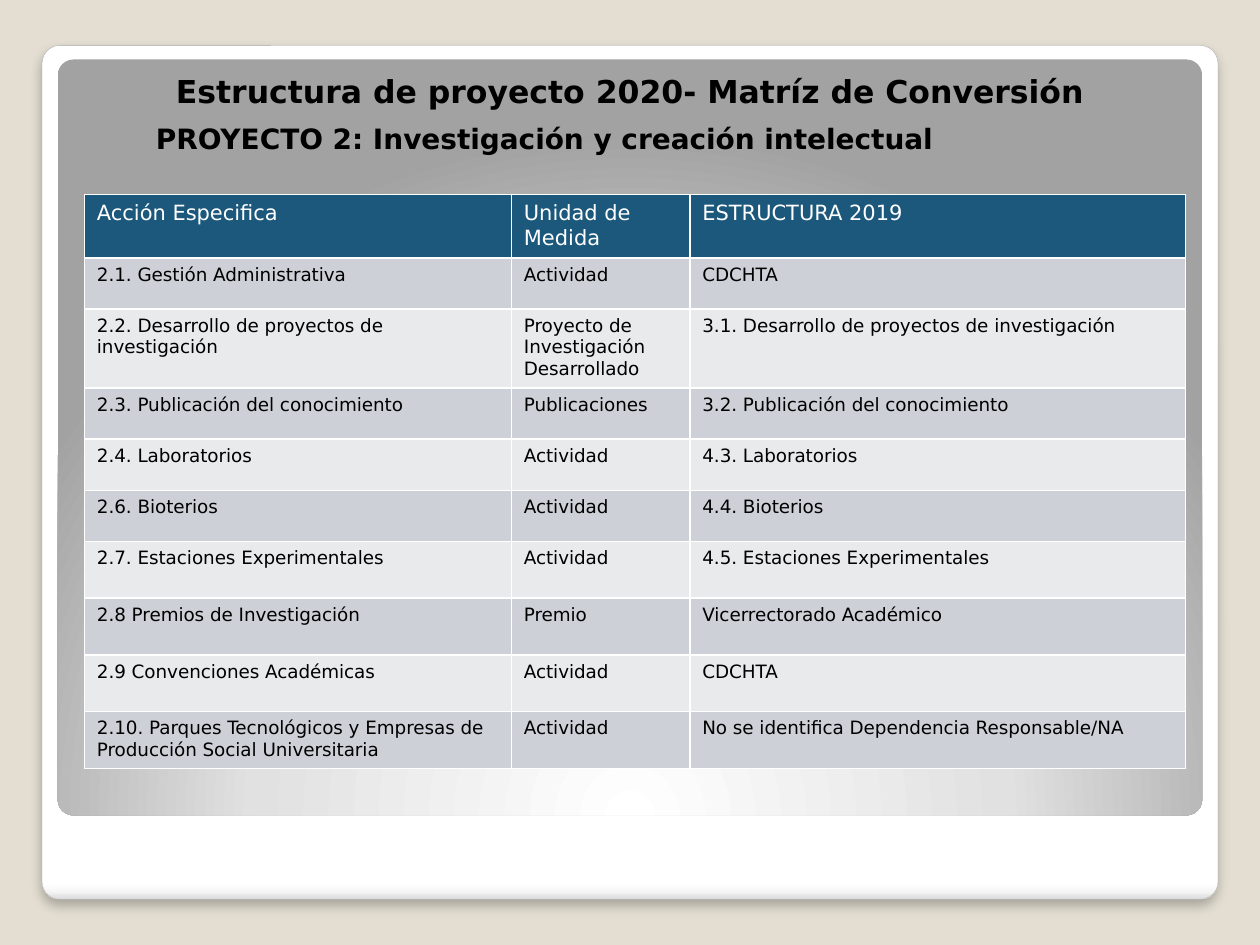
from lxml.etree import SubElement
from pptx import Presentation
from pptx.dml.color import RGBColor
from pptx.enum.shapes import MSO_SHAPE
from pptx.oxml import parse_xml
from pptx.oxml.ns import nsdecls, qn
from pptx.util import Pt

FONT = "DejaVu Sans"
WHITE, BLACK = "FFFFFF", "000000"
HEADER_FILL = "1B587C"
BAND_FILLS = ["CDD1D7", "E8EAEC"]

COLUMN_WIDTHS = [244, 102, 283.4]
ROW_HEIGHTS = [36, 29.3, 45] + [29.3] * 3 + [32.4] * 4
ROWS = [
    ("Acción Especifica", "Unidad de Medida", "ESTRUCTURA 2019"),
    ("2.1. Gestión Administrativa", "Actividad", "CDCHTA"),
    ("2.2. Desarrollo de proyectos de investigación",
     "Proyecto de Investigación Desarrollado",
     "3.1. Desarrollo de proyectos de investigación"),
    ("2.3. Publicación del conocimiento", "Publicaciones",
     "3.2. Publicación del conocimiento"),
    ("2.4. Laboratorios", "Actividad", "4.3. Laboratorios"),
    ("2.6. Bioterios", "Actividad", "4.4. Bioterios"),
    ("2.7. Estaciones Experimentales", "Actividad",
     "4.5. Estaciones Experimentales"),
    ("2.8 Premios de Investigación", "Premio", "Vicerrectorado Académico"),
    ("2.9 Convenciones Académicas", "Actividad", "CDCHTA"),
    ("2.10. Parques Tecnológicos y Empresas de Producción Social Universitaria",
     "Actividad", "No se identifica Dependencia Responsable/NA"),
]

LINEAR_DOWN = '<a:lin ang="5400000" scaled="0"/>'
CIRCLE_FROM_BELOW = ('<a:path path="circle"><a:fillToRect l="50000" t="175000" '
                     'r="50000" b="-75000"/></a:path>')


def color(value):
    return RGBColor.from_string(value)


def format_text(text_frame, size, text_color, bold=False):
    for paragraph in text_frame.paragraphs:
        for run in paragraph.runs:
            run.font.name = FONT
            run.font.size = Pt(size)
            run.font.bold = bold
            run.font.color.rgb = color(text_color)


def add_panel(slide, left, top, width, height, stops, direction):
    """Rounded rectangle with a gradient fill and no outline."""
    shape = slide.shapes.add_shape(MSO_SHAPE.ROUNDED_RECTANGLE,
                                   Pt(left), Pt(top), Pt(width), Pt(height))
    shape.adjustments[0] = 0.021
    shape.shadow.inherit = False
    shape.line.fill.background()
    stop_xml = "".join(
        f'<a:gs pos="{position * 1000}"><a:srgbClr val="{value}"/></a:gs>'
        for position, value in stops)
    gradient = parse_xml(f'<a:gradFill {nsdecls("a")} rotWithShape="1">'
                         f'<a:gsLst>{stop_xml}</a:gsLst>{direction}</a:gradFill>')
    shape.element.spPr.find(qn("a:prstGeom")).addnext(gradient)
    return shape


def add_drop_shadow(shape, blur, distance, opacity):
    effects = shape.element.spPr.find(qn("a:effectLst"))
    shadow = SubElement(effects, qn("a:outerShdw"), blurRad=str(Pt(blur)),
                        dist=str(Pt(distance)), dir="5400000",
                        algn="t", rotWithShape="0")
    shade = SubElement(shadow, qn("a:srgbClr"), val=BLACK)
    SubElement(shade, qn("a:alpha"), val=str(opacity * 1000))


def add_heading(slide, left, top, width, height, text, size, wrap):
    box = slide.shapes.add_textbox(Pt(left), Pt(top), Pt(width), Pt(height))
    box.text_frame.word_wrap = wrap
    box.text_frame.text = text
    format_text(box.text_frame, size, BLACK, bold=True)


def set_borders(cell, value, width):
    properties = cell._tc.get_or_add_tcPr()
    for side in ("lnL", "lnR", "lnT", "lnB"):
        line = SubElement(properties, qn(f"a:{side}"), w=str(Pt(width)))
        fill = SubElement(line, qn("a:solidFill"))
        SubElement(fill, qn("a:srgbClr"), val=value)


def add_matrix(slide, left, top):
    frame = slide.shapes.add_table(len(ROWS), len(COLUMN_WIDTHS), Pt(left), Pt(top),
                                   Pt(sum(COLUMN_WIDTHS)), Pt(sum(ROW_HEIGHTS)))
    table = frame.table
    for column, width in zip(table.columns, COLUMN_WIDTHS):
        column.width = Pt(width)
    for row_index, texts in enumerate(ROWS):
        row = table.rows[row_index]
        row.height = Pt(ROW_HEIGHTS[row_index])
        is_header = row_index == 0
        fill = HEADER_FILL if is_header else BAND_FILLS[(row_index - 1) % 2]
        for cell, text in zip(row.cells, texts):
            set_borders(cell, WHITE, 1)
            cell.fill.solid()
            cell.fill.fore_color.rgb = color(fill)
            cell.text_frame.text = text
            format_text(cell.text_frame, 12 if is_header else 10.5,
                        WHITE if is_header else BLACK)


def main():
    presentation = Presentation()
    presentation.slide_width, presentation.slide_height = Pt(720), Pt(540)
    slide = presentation.slides.add_slide(presentation.slide_layouts[6])
    slide.background.fill.solid()
    slide.background.fill.fore_color.rgb = color("E3DED1")

    # White card and grey panel
    card = add_panel(slide, 24, 26, 672, 488,
                     [(0, WHITE), (98, WHITE), (99, "F7F7F7"), (100, "DADADA")],
                     LINEAR_DOWN)
    card.line.color.rgb = color("A4A4A4")
    card.line.width = Pt(0.16)
    add_drop_shadow(card, blur=6, distance=4, opacity=25)
    add_panel(slide, 33, 34, 654, 432,
              [(0, WHITE), (55, "E1E1E1"), (100, "A2A2A2")], CIRCLE_FROM_BELOW)

    # Headings
    add_heading(slide, 93.5, 37.5, 534, 29,
                "Estructura de proyecto 2020- Matríz de Conversión", 18, wrap=False)
    add_heading(slide, 82, 66, 612, 27,
                "PROYECTO 2: Investigación y creación intelectual", 16, wrap=True)

    # Conversion matrix
    add_matrix(slide, 48.2, 111.3)

    presentation.save("out.pptx")


if __name__ == "__main__":
    main()
